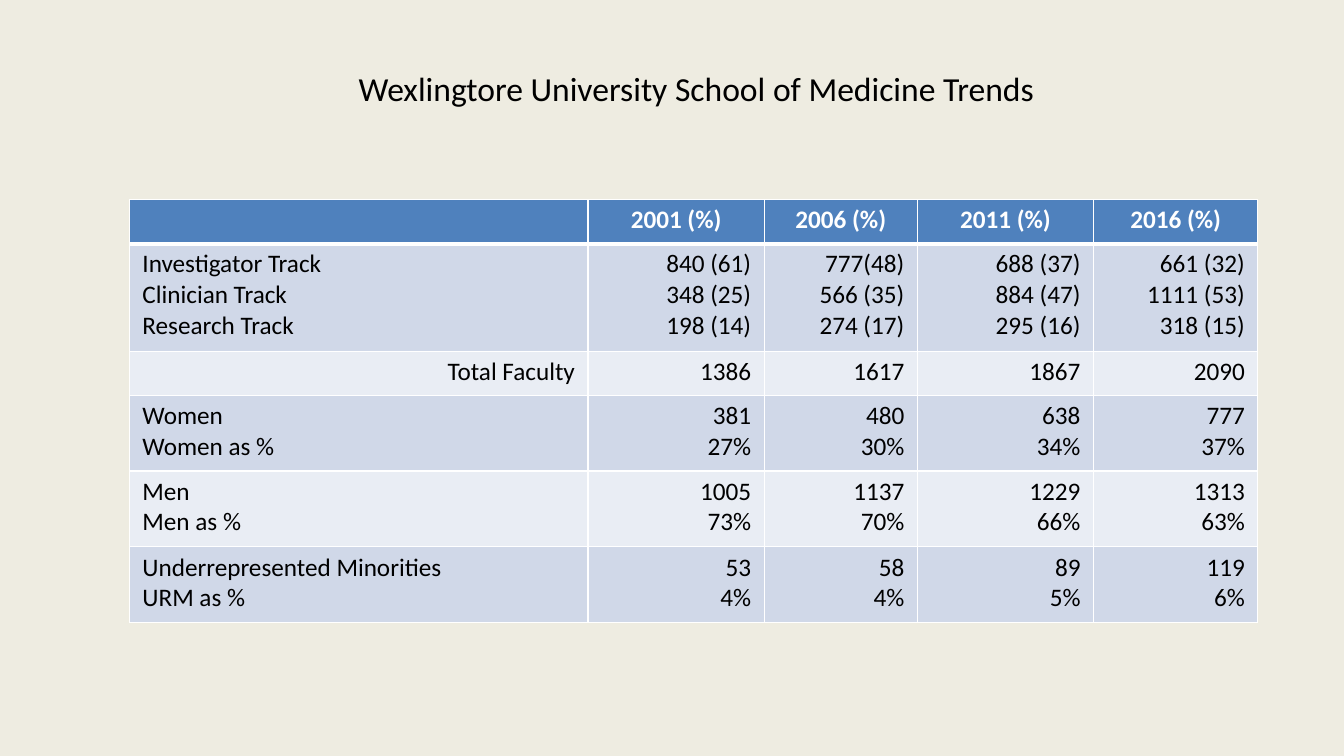
from lxml.etree import SubElement
from pptx import Presentation
from pptx.dml.color import RGBColor
from pptx.enum.text import PP_ALIGN
from pptx.oxml.ns import qn
from pptx.util import Cm, Pt

COLORS = {
    "background": "EEECE1",
    "header": "4F81BD",
    "dark_band": "D0D8E8",
    "light_band": "E9EDF4",
    "border": "FFFFFF",
    "header_text": "FFFFFF",
    "text": "000000",
}

YEARS = ["", "2001 (%)", "2006 (%)", "2011 (%)", "2016 (%)"]
FACULTY_GROUPS = [
    ["Investigator Track\nClinician Track\nResearch Track",
     "840 (61)\n348 (25)\n198 (14)", "777(48)\n566 (35)\n274 (17)",
     "688 (37)\n884 (47)\n295 (16)", "661 (32)\n1111 (53)\n318 (15)"],
    ["Total Faculty", "1386", "1617", "1867", "2090"],
    ["Women\nWomen as %", "381\n27%", "480\n30%", "638\n34%", "777\n37%"],
    ["Men\nMen as %", "1005\n73%", "1137\n70%", "1229\n66%", "1313\n63%"],
    ["Underrepresented Minorities\nURM as %",
     "53\n4%", "58\n4%", "89\n5%", "119\n6%"],
]
COLUMN_WIDTHS = [11.56, 4.44, 3.86, 4.44, 4.14]
ROW_HEIGHTS = [1.11, 2.71, 1.11, 1.91, 1.91, 1.91]


def write(frame, text, font="Calibri", size=18, color="text", bold=False,
          align=PP_ALIGN.LEFT):
    frame.word_wrap = True
    frame.text = text
    for paragraph in frame.paragraphs:
        paragraph.alignment = align
        paragraph.font.size = Pt(size)
        for run in paragraph.runs:
            run.font.name = font
            run.font.size = Pt(size)
            run.font.bold = bold
            run.font.color.rgb = RGBColor.from_string(COLORS[color])


class TrendsSlide:
    def __init__(self, deck):
        self.slide = deck.slides.add_slide(deck.slide_layouts[6])
        background = self.slide.background.fill
        background.solid()
        background.fore_color.rgb = RGBColor.from_string(COLORS["background"])

    def heading(self, text, left, top, width, height):
        box = self.slide.shapes.add_textbox(
            Cm(left), Cm(top), Cm(width), Cm(height))
        write(box.text_frame, text, size=24, align=PP_ALIGN.CENTER)

    def borders(self, cell, **widths):
        properties = cell._tc.get_or_add_tcPr()
        for side in "LRTB":
            line = SubElement(properties, qn(f"a:ln{side}"),
                              w=str(Pt(widths.get(side, 1))))
            fill = SubElement(line, qn("a:solidFill"))
            SubElement(fill, qn("a:srgbClr"), val=COLORS["border"])

    def cell(self, cell, text, fill, widths, **text_format):
        cell.margin_left = cell.margin_right = Cm(0.33)
        cell.margin_top = cell.margin_bottom = Cm(0.13)
        self.borders(cell, **widths)
        cell.fill.solid()
        cell.fill.fore_color.rgb = RGBColor.from_string(COLORS[fill])
        write(cell.text_frame, text, **text_format)

    def table(self, header, groups, left, top, widths, heights):
        table = self.slide.shapes.add_table(
            len(heights), len(widths), Cm(left), Cm(top),
            Cm(sum(widths)), Cm(sum(heights))).table
        for column, width in zip(table.columns, widths):
            column.width = Cm(width)
        for row, height in zip(table.rows, heights):
            row.height = Cm(height)
        for column, year in enumerate(header):
            self.cell(table.cell(0, column), year, "header", {"B": 3},
                      color="header_text", bold=True, align=PP_ALIGN.CENTER)
        for row, group in enumerate(groups, start=1):
            band = "dark_band" if row % 2 else "light_band"
            edges = {"T": 3} if row == 1 else {}
            for column, text in enumerate(group):
                is_label = column == 0 and not text.startswith("Total")
                align = PP_ALIGN.LEFT if is_label else PP_ALIGN.RIGHT
                self.cell(table.cell(row, column), text, band, edges,
                          align=align)


def main():
    deck = Presentation()
    deck.slide_width, deck.slide_height = Cm(33.87), Cm(19.05)
    trends = TrendsSlide(deck)
    trends.table(YEARS, FACULTY_GROUPS, 3.26, 5.03, COLUMN_WIDTHS, ROW_HEIGHTS)
    trends.heading("Wexlingtore University School of Medicine Trends",
                   7.57, 1.59, 19.96, 1.27)
    deck.save("out.pptx")


if __name__ == "__main__":
    main()
